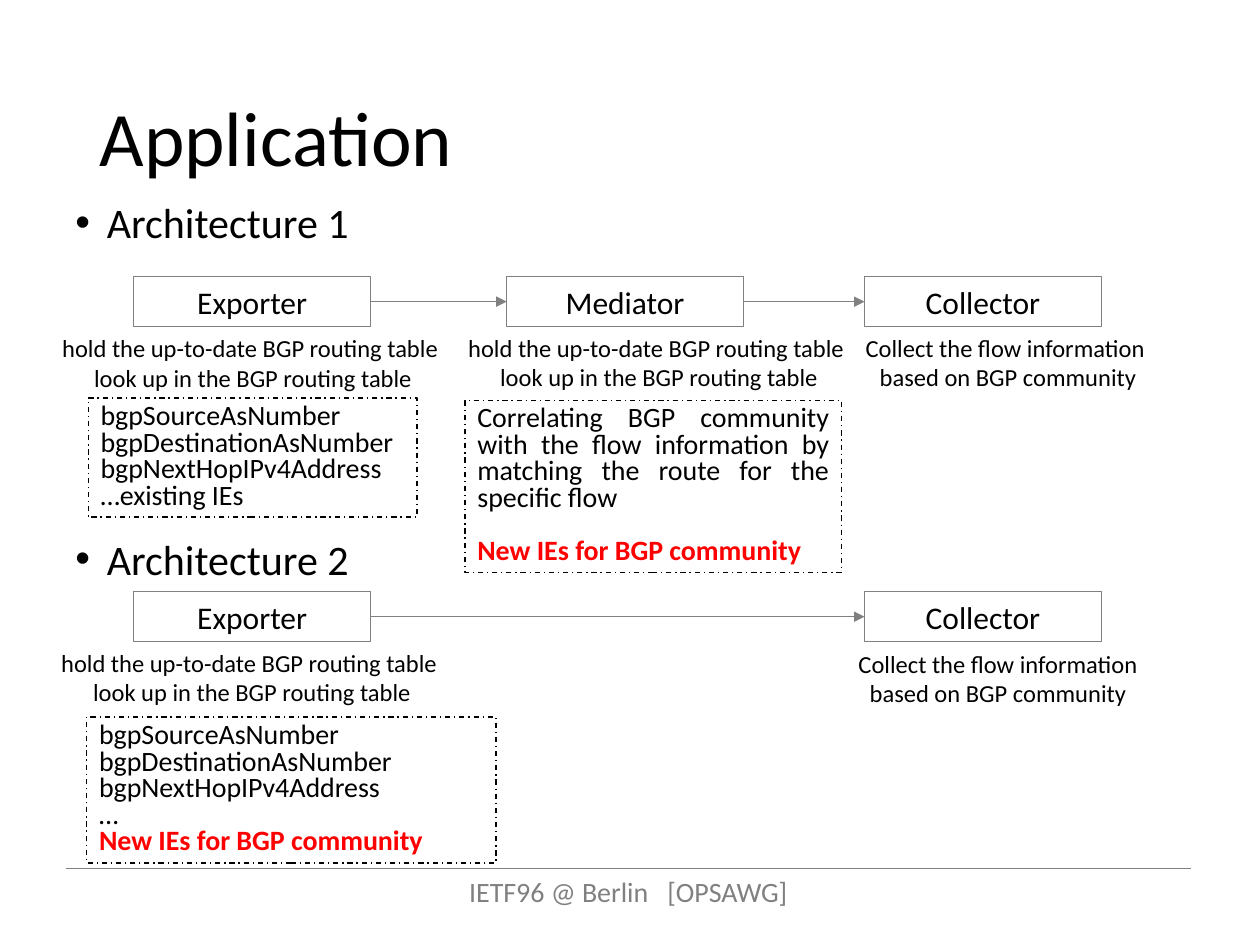
from pptx import Presentation
from pptx.dml.color import RGBColor
from pptx.enum.dml import MSO_LINE
from pptx.enum.shapes import MSO_CONNECTOR, MSO_SHAPE
from pptx.enum.text import MSO_ANCHOR, PP_ALIGN
from pptx.oxml.ns import qn
from pptx.util import Pt
from lxml.etree import SubElement

FONT = "Calibri"
BLACK, GRAY, RED = "000000", "808080", "FF0000"
NODE_WIDTH, NODE_HEIGHT = 135.4, 28.8
EXPORTER_X, MEDIATOR_X, COLLECTOR_X = 76.4, 289.5, 494
LINE_PITCH = 15.2
LOOKUP = ["hold the up-to-date BGP routing table ", "look up in the BGP routing table"]
ELEMENTS = ["bgpSourceAsNumber", "bgpDestinationAsNumber", "bgpNextHopIPv4Address"]
NEW_ELEMENTS = "New IEs for BGP community"


def color(value):
    return RGBColor.from_string(value)


def add_run(paragraph, text, size, fill=BLACK, bold=False):
    run = paragraph.add_run()
    run.text = text
    run.font.name, run.font.size, run.font.bold = FONT, Pt(size), bold
    run.font.color.rgb = color(fill)
    return run


def next_paragraph(frame, index):
    return frame.add_paragraph() if index else frame.paragraphs[0]


def add_text_box(slide, box):
    frame = slide.shapes.add_textbox(*map(Pt, box)).text_frame
    frame.word_wrap = True
    return frame


def add_outline(slide, box, line_color):
    shape = slide.shapes.add_shape(MSO_SHAPE.RECTANGLE, *map(Pt, box))
    shape.shadow.inherit = False
    shape.fill.background()
    shape.line.color.rgb = color(line_color)
    shape.line.width = Pt(0.75)
    shape.text_frame.word_wrap = True
    return shape


def add_line(slide, ends):
    line = slide.shapes.add_connector(MSO_CONNECTOR.STRAIGHT, *map(Pt, ends))
    line.line.color.rgb = color(GRAY)
    line.line.width = Pt(0.5)
    SubElement(line._element.spPr, qn("a:effectLst"))
    return line


def add_arrow(slide, source, target):
    arrow = add_line(slide, (0, 0, 0, 0))
    arrow.begin_connect(source, 3)
    arrow.end_connect(target, 1)
    SubElement(arrow.line._get_or_add_ln(), qn("a:tailEnd"), type="triangle")


def add_node(slide, left, top, label):
    node = add_outline(slide, (left, top, NODE_WIDTH, NODE_HEIGHT), GRAY)
    paragraph = node.text_frame.paragraphs[0]
    paragraph.alignment = PP_ALIGN.CENTER
    add_run(paragraph, label, 18)
    return node


def add_chain(slide, top, stages):
    """A row of nodes joined by arrows, each node given as (left, label)."""
    nodes = [add_node(slide, left, top, label) for left, label in stages]
    for source, target in zip(nodes, nodes[1:]):
        add_arrow(slide, source, target)


def add_caption(slide, box, lines):
    frame = add_text_box(slide, box)
    for index, text in enumerate(lines):
        paragraph = next_paragraph(frame, index)
        paragraph.alignment = PP_ALIGN.CENTER
        add_run(paragraph, text, 14)


def add_detail(slide, box, lines, gap_before_new=0):
    """A dash-dot panel in which the new elements stand out in red."""
    shape = add_outline(slide, box, BLACK)
    shape.line.dash_style = MSO_LINE.DASH_DOT
    frame = shape.text_frame
    for index, text in enumerate(lines):
        is_new = text == NEW_ELEMENTS
        paragraph = next_paragraph(frame, index)
        paragraph.alignment = PP_ALIGN.JUSTIFY
        paragraph.line_spacing = Pt(LINE_PITCH)
        if is_new:
            paragraph.space_before = Pt(gap_before_new)
        add_run(paragraph, text, 16, RED if is_new else BLACK, is_new)


def add_heading(slide, box, text):
    paragraph = add_text_box(slide, box).paragraphs[0]
    paragraph.line_spacing = 0.8
    paragraph.space_before = Pt(10)
    properties = paragraph._p.get_or_add_pPr()
    properties.set("marL", str(Pt(18)))
    properties.set("indent", str(Pt(-18)))
    SubElement(properties, qn("a:buFont"), typeface="Arial")
    SubElement(properties, qn("a:buChar"), char="•")
    add_run(paragraph, text, 24)


def add_title(slide, box, text):
    title = slide.shapes.title
    title.left, title.top, title.width, title.height = map(Pt, box)
    title.text_frame.vertical_anchor = MSO_ANCHOR.MIDDLE
    paragraph = title.text_frame.paragraphs[0]
    paragraph.alignment = PP_ALIGN.LEFT
    paragraph.line_spacing = 0.9
    add_run(paragraph, text, 44)


def add_footer(slide, box):
    left, top, width, height = box
    add_line(slide, (left, top, left + width, top))
    paragraph = add_text_box(slide, box).paragraphs[0]
    paragraph.alignment = PP_ALIGN.CENTER
    add_run(paragraph, "IETF96 @ Berlin", 16, GRAY)
    # One space, widened by character spacing
    gap = add_run(paragraph, " ", 16, GRAY)
    gap.font._element.set("spc", "720")
    add_run(paragraph, "[OPSAWG]", 16, GRAY)


def add_architecture_one(slide):
    add_heading(slide, (36, 114.5, 184.3, 31), "Architecture 1")
    add_chain(slide, 158, [(EXPORTER_X, "Exporter"), (MEDIATOR_X, "Mediator"),
                           (COLLECTOR_X, "Collector")])
    add_caption(slide, (28, 187, 233.3, 41), LOOKUP)
    add_caption(slide, (260, 186.5, 233.3, 41), LOOKUP)
    add_caption(slide, (459.4, 186.5, 233.3, 41),
                ["Collect the flow information ", "based on BGP community"])
    add_detail(slide, (50.4, 227.5, 188, 68), ELEMENTS + ["…existing IEs"])
    add_detail(slide, (265.7, 229, 215.3, 98),
               ["Correlating BGP community with the flow information by "
                "matching the route for the specific flow", NEW_ELEMENTS], LINE_PITCH)


def add_architecture_two(slide):
    add_heading(slide, (36, 306.7, 184.3, 31), "Architecture 2")
    add_chain(slide, 338, [(EXPORTER_X, "Exporter"), (COLLECTOR_X, "Collector")])
    add_caption(slide, (27.4, 366.5, 233.3, 41), LOOKUP)
    add_caption(slide, (470.2, 367.2, 200.2, 41),
                ["Collect the flow information based on BGP community"])
    add_detail(slide, (49.5, 409.7, 234, 83.5), ELEMENTS + ["…", NEW_ELEMENTS])


def main():
    presentation = Presentation()
    presentation.slide_width, presentation.slide_height = Pt(720), Pt(540)
    slide = presentation.slides.add_slide(presentation.slide_layouts[5])
    add_footer(slide, (37.7, 496.5, 642.6, 26.6))
    add_title(slide, (49.7, 28.8, 620.6, 104.4), "Application")
    add_architecture_one(slide)
    add_architecture_two(slide)
    presentation.save("out.pptx")


if __name__ == "__main__":
    main()
